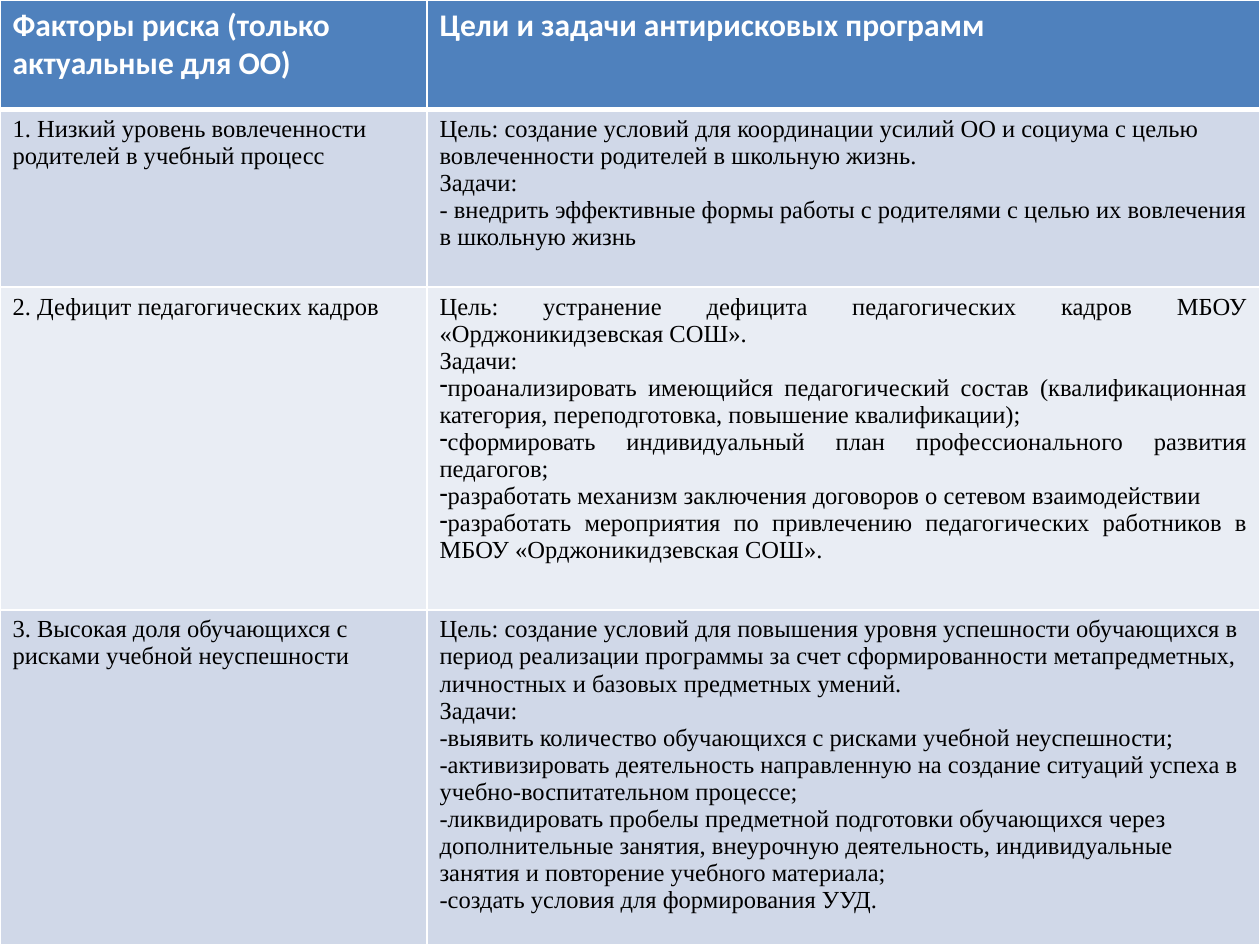
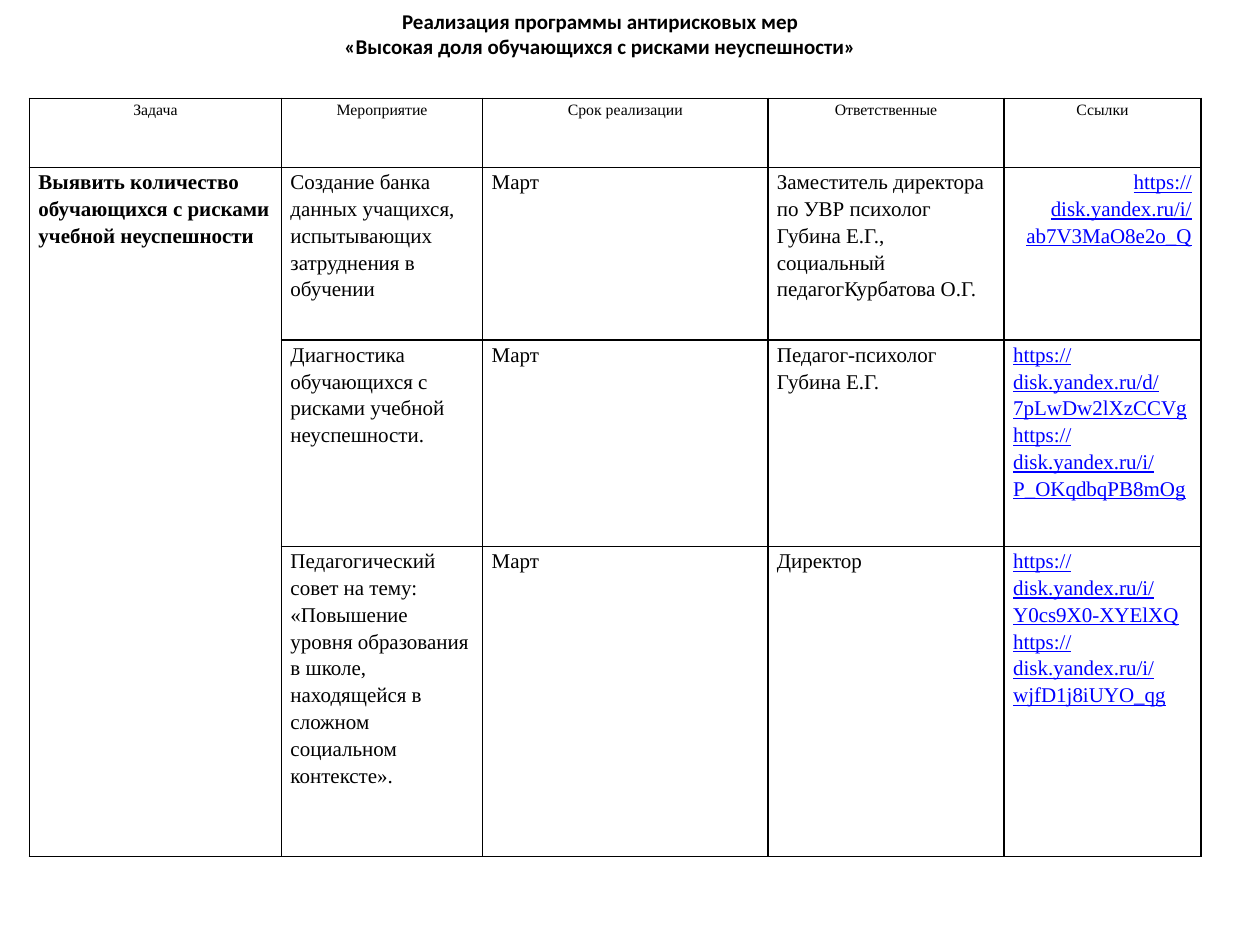
"""Build two slides on the school's anti-risk programmes."""
from dataclasses import dataclass

from lxml import etree
from pptx import Presentation
from pptx.dml.color import RGBColor
from pptx.enum.text import MSO_ANCHOR, MSO_AUTO_SIZE, PP_ALIGN
from pptx.oxml.ns import qn
from pptx.util import Pt

LEFT, CENTER = PP_ALIGN.LEFT, PP_ALIGN.CENTER
RIGHT, JUSTIFY = PP_ALIGN.RIGHT, PP_ALIGN.JUSTIFY
MIDDLE = MSO_ANCHOR.MIDDLE
NO_AUTOFIT = MSO_AUTO_SIZE.NONE
TITLE_ONLY, BLANK = 5, 6


@dataclass(frozen=True)
class Theme:
    white: str = "FFFFFF"
    black: str = "000000"
    header: str = "4F81BD"
    band_dark: str = "D0D8E8"
    band_light: str = "E9EDF4"
    link: str = "0000FF"
    heading_font: str = "Calibri"
    body_font: str = "Times New Roman"
    header_size: int = 18
    risk_size: int = 14
    plan_size: int = 12
    label_size: int = 9


THEME = Theme()


@dataclass(frozen=True)
class TextStyle:
    size: float
    name: str = THEME.body_font
    color: str = THEME.black
    bold: bool = False
    underline: bool = False
    align: PP_ALIGN = LEFT
    spacing: float = 1.0


TITLE = TextStyle(THEME.plan_size, THEME.heading_font, bold=True, align=CENTER)
RISK_HEADER = TextStyle(THEME.header_size, THEME.heading_font, THEME.white, bold=True)
RISK = TextStyle(THEME.risk_size)
RISK_JUSTIFIED = TextStyle(THEME.risk_size, align=JUSTIFY)
PLAN_HEADER = TextStyle(THEME.label_size, align=CENTER, spacing=1.15)
PLAN = TextStyle(THEME.plan_size, spacing=1.15)
PLAN_TASK = TextStyle(THEME.plan_size, bold=True, spacing=1.15)
LINK = TextStyle(THEME.plan_size, color=THEME.link, underline=True, spacing=1.15)
LINK_RIGHT = TextStyle(THEME.plan_size, color=THEME.link, underline=True,
                       align=RIGHT, spacing=1.15)

RISK_HEADINGS = ["Факторы риска (только актуальные для ОО)",
                 "Цели и задачи антирисковых программ"]
RISKS = [
    ("1. Низкий уровень вовлеченности родителей в учебный процесс", RISK, [
        "Цель: создание условий для координации усилий ОО и социума с целью "
        "вовлеченности родителей в школьную жизнь.",
        "Задачи:",
        "- внедрить эффективные формы работы с родителями с целью их вовлечения "
        "в школьную жизнь"]),
    ("2. Дефицит педагогических кадров", RISK_JUSTIFIED, [
        "Цель: устранение дефицита педагогических кадров МБОУ «Орджоникидзевская СОШ».",
        "Задачи:",
        "-проанализировать имеющийся педагогический состав (квалификационная "
        "категория, переподготовка, повышение квалификации);",
        "-сформировать индивидуальный план профессионального развития педагогов;",
        "-разработать механизм заключения договоров о сетевом взаимодействии",
        "-разработать мероприятия по привлечению педагогических работников в "
        "МБОУ «Орджоникидзевская СОШ»."]),
    ("3. Высокая доля обучающихся с рисками учебной неуспешности", RISK, [
        "Цель: создание условий для повышения уровня успешности обучающихся в "
        "период реализации программы за счет сформированности метапредметных, "
        "личностных и базовых предметных умений.",
        "Задачи:",
        "-выявить количество обучающихся с рисками учебной неуспешности;",
        "-активизировать деятельность направленную на создание ситуаций успеха в "
        "учебно-воспитательном процессе;",
        "-ликвидировать пробелы предметной подготовки обучающихся через "
        "дополнительные занятия, внеурочную деятельность, индивидуальные занятия "
        "и повторение учебного материала;",
        "-создать условия для формирования УУД."]),
]

PLAN_TITLE = ["Реализация программы антирисковых мер",
              "«Высокая доля обучающихся с рисками неуспешности»"]
PLAN_HEADINGS = ["Задача", "Мероприятие", "Срок реализации", "Ответственные", "Ссылки"]
TASK = "Выявить количество обучающихся с рисками учебной неуспешности"
ACTIVITIES = [
    ("Создание банка данных учащихся, испытывающих затруднения в обучении", "Март",
     ["Заместитель директора по УВР психолог Губина Е.Г.,",
      "социальный педагогКурбатова О.Г."],
     ["https://disk.yandex.ru/i/ab7V3MaO8e2o_Q"], LINK_RIGHT),
    ("Диагностика обучающихся с рисками учебной неуспешности.", "Март",
     ["Педагог-психолог", "Губина Е.Г."],
     ["https://disk.yandex.ru/d/7pLwDw2lXzCCVg",
      "https://disk.yandex.ru/i/P_OKqdbqPB8mOg"], LINK),
    ("Педагогический совет на тему: «Повышение уровня образования в школе, "
     "находящейся в сложном социальном контексте».", "Март",
     ["Директор"],
     ["https://disk.yandex.ru/i/Y0cs9X0-XYElXQ",
      "https://disk.yandex.ru/i/wjfD1j8iUYO_qg"], LINK),
]


class Deck:
    """Hold the presentation, its current slide and one method per element."""

    def __init__(self):
        self.presentation = Presentation()
        self.presentation.slide_width = Pt(720)
        self.presentation.slide_height = Pt(540)
        self.slide = None

    def add_slide(self, layout):
        """Start a new current slide."""
        self.slide = self.presentation.slides.add_slide(
            self.presentation.slide_layouts[layout])

    def fill_text(self, text_frame, lines, style, dash_bullets=False):
        """Fill a text frame with one paragraph per line."""
        for index, line in enumerate(lines):
            paragraph = text_frame.paragraphs[0] if index == 0 else text_frame.add_paragraph()
            paragraph.alignment = style.align
            paragraph.line_spacing = style.spacing
            if dash_bullets and line.startswith("-"):
                self.bullet(paragraph)
                line = line[1:]
            run = paragraph.add_run()
            run.text = line
            values = {"size": Pt(style.size), "name": style.name,
                      "bold": style.bold, "underline": style.underline}
            for name, value in values.items():
                setattr(run.font, name, value)
            run.font.color.rgb = RGBColor.from_string(style.color)

    def bullet(self, paragraph):
        """Give a paragraph a dash bullet without indent."""
        properties = paragraph._p.get_or_add_pPr()
        properties.set("marL", "0")
        properties.set("indent", "0")
        etree.SubElement(properties, qn("a:buFontTx"))
        etree.SubElement(properties, qn("a:buChar"), char="-")

    def title(self, lines, left, top, width, height):
        """Move and fill the title placeholder."""
        shape = self.slide.shapes.title
        box = {"left": left, "top": top, "width": width, "height": height}
        for name, value in box.items():
            setattr(shape, name, Pt(value))
        frame = {"word_wrap": True, "auto_size": NO_AUTOFIT, "vertical_anchor": MIDDLE}
        for name, value in frame.items():
            setattr(shape.text_frame, name, value)
        self.fill_text(shape.text_frame, lines, TITLE)

    def table(self, left, top, widths, heights):
        """Add an empty table with the given column and row sizes."""
        table = self.slide.shapes.add_table(
            len(heights), len(widths), Pt(left), Pt(top),
            Pt(sum(widths)), Pt(sum(heights))).table
        for column, width in zip(table.columns, widths):
            column.width = Pt(width)
        for row, height in zip(table.rows, heights):
            row.height = Pt(height)
        return table

    def cell(self, cell, lines, style, fill=None, margins=(7.2, 3.6), dash_bullets=False):
        """Fill one cell and set its colour and margins."""
        across, down = (Pt(margin) for margin in margins)
        values = {"margin_left": across, "margin_right": across,
                  "margin_top": down, "margin_bottom": down}
        for name, value in values.items():
            setattr(cell, name, value)
        if fill:
            cell.fill.solid()
            cell.fill.fore_color.rgb = RGBColor.from_string(fill)
        else:
            cell.fill.background()
        self.fill_text(cell.text_frame, lines, style, dash_bullets)

    def borders(self, cell, color, **widths):
        """Draw all four sides of a cell, one point wide unless given."""
        properties = cell._tc.get_or_add_tcPr()
        for index, side in enumerate("LRTB"):
            line = etree.Element(qn(f"a:ln{side}"), w=str(Pt(widths.get(side, 1))))
            fill = etree.SubElement(line, qn("a:solidFill"))
            etree.SubElement(fill, qn("a:srgbClr"), val=color)
            properties.insert(index, line)


def build_risks(deck):
    """Build the slide of risk factors and programme goals."""
    deck.add_slide(BLANK)
    table = deck.table(0, 0, [244, 476], [62.5, 101.5, 184.5, 191.5])
    for column, heading in enumerate(RISK_HEADINGS):
        deck.cell(table.cell(0, column), [heading], RISK_HEADER, THEME.header)
        deck.borders(table.cell(0, column), THEME.white, B=3)
    for row, (factor, style, goals) in enumerate(RISKS, start=1):
        fill = THEME.band_dark if row % 2 else THEME.band_light
        deck.cell(table.cell(row, 0), [factor], RISK, fill)
        deck.cell(table.cell(row, 1), goals, style, fill,
                  dash_bullets=style is RISK_JUSTIFIED)
        for column in range(2):
            deck.borders(table.cell(row, column), THEME.white, T=3 if row == 1 else 1)


def build_plan(deck):
    """Build the slide of planned activities."""
    deck.add_slide(TITLE_ONLY)
    deck.title(PLAN_TITLE, 0, 0, 686, 38)
    table = deck.table(16.8, 56.2, [144, 115, 163, 135, 112.5], [39.6, 98.6, 118, 177])
    for column, heading in enumerate(PLAN_HEADINGS):
        deck.cell(table.cell(0, column), [heading], PLAN_HEADER, margins=(3.6, 0))
    for row, (activity, term, people, links, link_style) in enumerate(ACTIVITIES, start=1):
        task = [TASK] if row == 1 else []
        contents = [(task, PLAN_TASK), ([activity], PLAN), ([term], PLAN),
                    (people, PLAN), (links, link_style)]
        for column, (lines, style) in enumerate(contents):
            deck.cell(table.cell(row, column), lines, style, margins=(5.2, 0))
    for cell in table.iter_cells():
        deck.borders(cell, THEME.black)
    table.cell(1, 0).merge(table.cell(len(ACTIVITIES), 0))


def main():
    """Build and save the presentation."""
    deck = Deck()
    build_risks(deck)
    build_plan(deck)
    deck.presentation.save("out.pptx")


if __name__ == "__main__":
    main()
